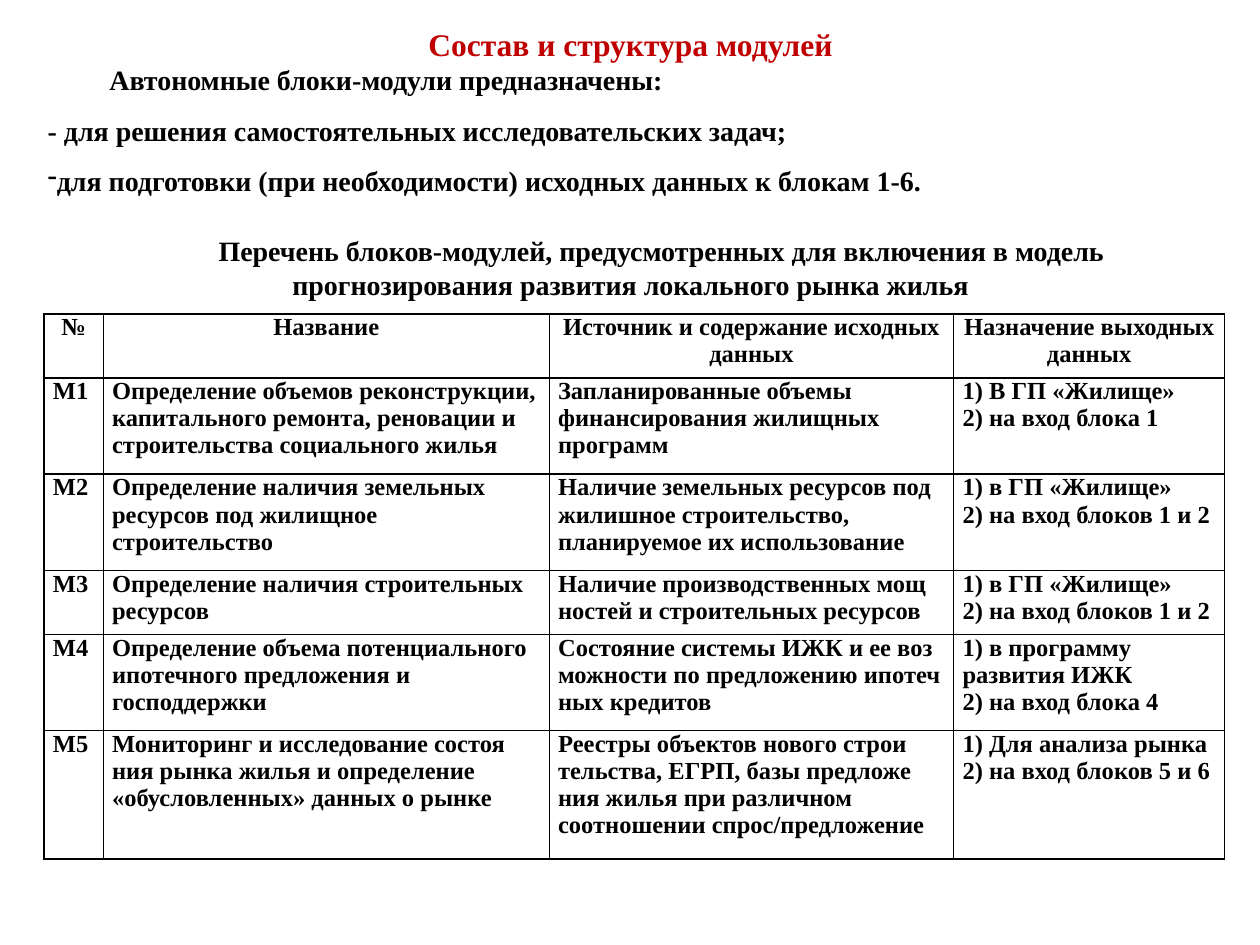
from lxml.etree import SubElement
from pptx import Presentation
from pptx.dml.color import RGBColor
from pptx.enum.text import MSO_AUTO_SIZE, PP_ALIGN
from pptx.oxml.ns import qn
from pptx.util import Emu, Inches, Pt

THEME = {
    "font": "Times New Roman",
    "ink": "000000",
    "accent": "C00000",
    "title": 18,
    "body": 16,
    "table": 14,
    "border": 1,
}

TITLE = "Состав и структура модулей"
PURPOSE = "Автономные блоки-модули предназначены:"
TASKS = "- для решения самостоятельных исследовательских задач;"
PREPARATION = "для подготовки (при необходимости) исходных данных к блокам 1-6."
CAPTION = ("Перечень блоков-модулей, предусмотренных для включения в модель "
           "прогнозирования развития локального рынка жилья")

HEADERS = ["№", "Название", "Источник и содержание исходных данных",
           "Назначение выходных данных"]
MODULES = [
    ("М1",
     "Определение объемов реконструкции, капитального ремонта, реновации и "
     "строительства социального жилья",
     "Запланированные объемы финансирования жилищных программ",
     "1) В ГП «Жилище»\n2) на вход блока 1"),
    ("М2",
     "Определение наличия земельных ресурсов под жилищное строительство",
     "Наличие земельных ресурсов под жилишное строительство, "
     "планируемое их использование",
     "1) в ГП «Жилище»\n2) на вход блоков 1 и 2"),
    ("М3",
     "Определение наличия строительных ресурсов",
     "Наличие производственных мощ ностей и строительных ресурсов",
     "1) в ГП «Жилище»\n2) на вход блоков 1 и 2"),
    ("М4",
     "Определение объема потенциального ипотечного предложения и господдержки",
     "Состояние системы ИЖК и ее воз можности по предложению ипотеч ных кредитов",
     "1) в программу развития ИЖК\n2) на вход блока 4"),
    ("М5",
     "Мониторинг и исследование состоя ния рынка жилья и определение "
     "«обусловленных» данных о рынке",
     "Реестры объектов нового строи тельства, ЕГРП, базы предложе ния жилья "
     "при различном соотношении спрос/предложение",
     "1) Для анализа рынка\n2) на вход блоков 5 и 6"),
]
COLUMN_WIDTHS = [0.47, 3.54, 3.21, 2.15]
ROW_LINES = [2, 3, 3, 2, 3, 4]
TABLE_HEIGHT = 4.33
JUSTIFIED_OUTPUTS = ("М1", "М2", "М3")


def style(paragraph, size, color=THEME["ink"], align=PP_ALIGN.LEFT):
    paragraph.alignment = align
    font = paragraph.font
    font.name, font.size, font.bold = THEME["font"], Pt(size), True
    font.color.rgb = RGBColor.from_string(color)


def indent_first_line(paragraph):
    properties = paragraph._p.get_or_add_pPr()
    properties.set("marL", "0")
    properties.set("indent", str(Inches(0.49)))


def add_dash(paragraph):
    properties = paragraph._p.get_or_add_pPr()
    dash = properties.makeelement(qn("a:buChar"), {"char": "-"})
    properties.insert_element_before(dash, "a:tabLst", "a:defRPr", "a:extLst")


def draw_borders(cell):
    properties = cell._tc.get_or_add_tcPr()
    for side in ("a:lnL", "a:lnR", "a:lnT", "a:lnB"):
        line = SubElement(properties, qn(side), w=str(Pt(THEME["border"])))
        fill = SubElement(line, qn("a:solidFill"))
        SubElement(fill, qn("a:srgbClr"), val=THEME["ink"])


def add_introduction(slide):
    frame = slide.shapes.add_textbox(
        Inches(0.28), 0, Inches(9.45), Inches(2.47)).text_frame
    frame.word_wrap = True
    frame.auto_size = MSO_AUTO_SIZE.SHAPE_TO_FIT_TEXT
    frame.text = "\n".join([TITLE, PURPOSE, TASKS, PREPARATION, CAPTION])
    title, purpose, tasks, preparation, caption = frame.paragraphs
    style(title, THEME["title"], THEME["accent"], PP_ALIGN.CENTER)
    for paragraph in (purpose, tasks, preparation):
        style(paragraph, THEME["body"])
    style(caption, THEME["body"], align=PP_ALIGN.CENTER)
    for paragraph in (title, tasks, preparation):
        paragraph.line_spacing = 1.5
    for paragraph in (purpose, caption):
        indent_first_line(paragraph)
    caption.space_before = Pt(21)
    add_dash(preparation)


def cell_alignment(row, column, module):
    if row == 0:
        return PP_ALIGN.CENTER
    if column == 0 or (column == 3 and module in JUSTIFIED_OUTPUTS):
        return PP_ALIGN.JUSTIFY
    return PP_ALIGN.LEFT


def add_modules(slide):
    rows = [HEADERS, *MODULES]
    modules = slide.shapes.add_table(
        len(rows), len(HEADERS), Inches(0.35), Inches(2.49),
        Inches(sum(COLUMN_WIDTHS)), Inches(TABLE_HEIGHT)).table
    modules.first_row = modules.horz_banding = False
    for column, width in zip(modules.columns, COLUMN_WIDTHS):
        column.width = Inches(width)
    for row, lines in zip(modules.rows, ROW_LINES):
        row.height = Emu(Inches(TABLE_HEIGHT) * lines // sum(ROW_LINES))
    for r, entries in enumerate(rows):
        for c, entry in enumerate(entries):
            cell = modules.cell(r, c)
            cell.margin_left = cell.margin_right = Inches(0.07)
            cell.margin_top = cell.margin_bottom = 0
            cell.text = entry
            for paragraph in cell.text_frame.paragraphs:
                style(paragraph, THEME["table"],
                      align=cell_alignment(r, c, entries[0]))
            draw_borders(cell)
            cell.fill.background()


def main():
    deck = Presentation()
    deck.slide_width, deck.slide_height = Inches(10), Inches(7.5)
    slide = deck.slides.add_slide(deck.slide_layouts[6])
    add_introduction(slide)
    add_modules(slide)
    deck.save("out.pptx")


if __name__ == "__main__":
    main()
